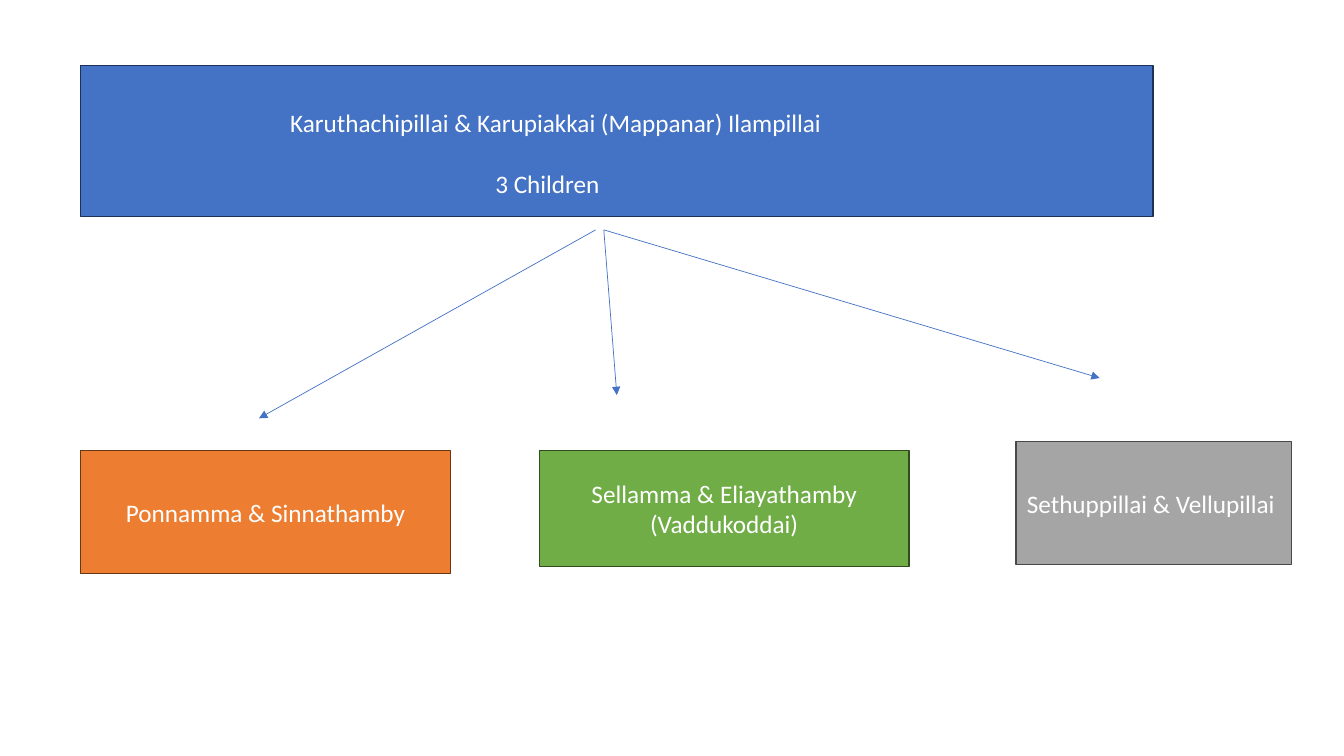
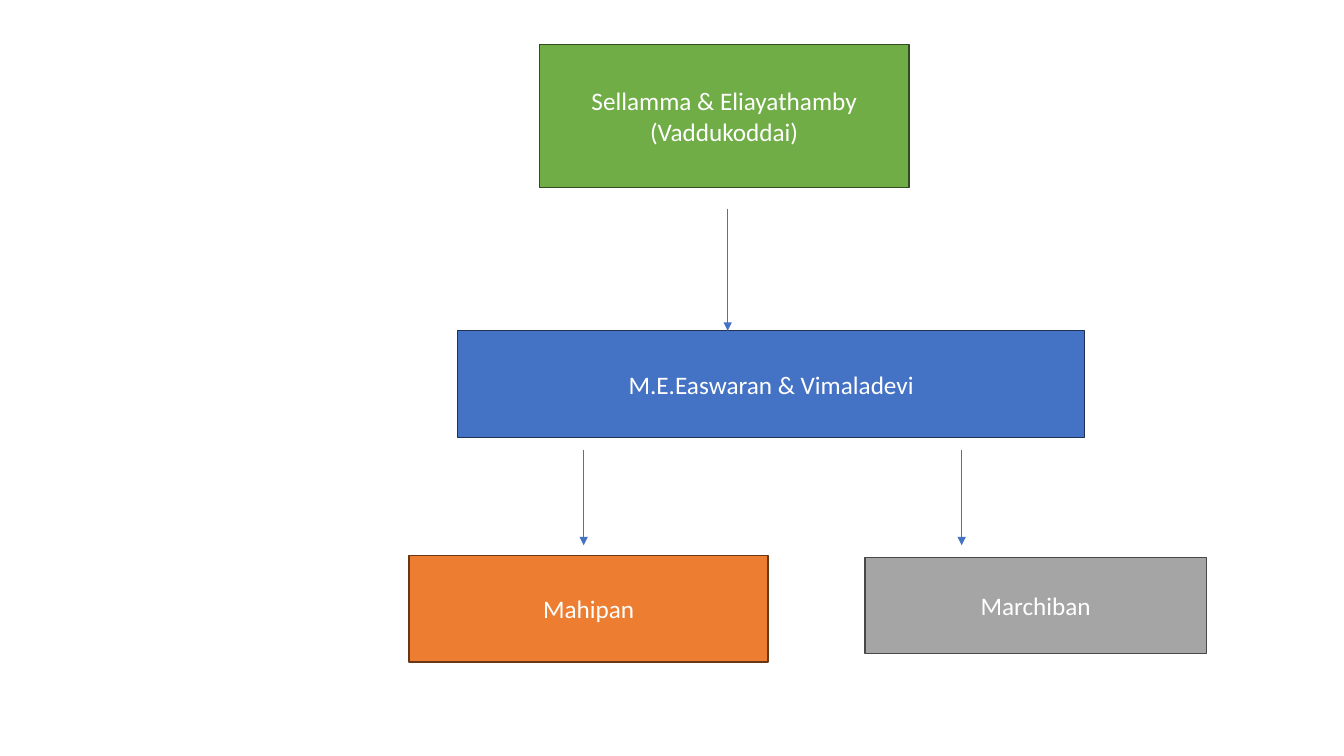
from dataclasses import dataclass

from lxml.etree import SubElement
from pptx import Presentation
from pptx.dml.color import RGBColor
from pptx.enum.shapes import MSO_CONNECTOR, MSO_SHAPE
from pptx.enum.text import MSO_ANCHOR, PP_ALIGN
from pptx.oxml.ns import qn
from pptx.util import Pt


@dataclass(frozen=True)
class Theme:
    font: str = "Calibri"
    text_size: float = 18
    text_color: str = "FFFFFF"
    border_width: float = 1
    arrow_width: float = 0.5
    arrow_color: str = "4472C4"
    blue: tuple = ("4472C4", "1E3256")
    orange: tuple = ("ED7D31", "683715")
    green: tuple = ("70AD47", "314C1F")
    gray: tuple = ("A5A5A5", "484848")


def write(para, text, *, theme, align=PP_ALIGN.CENTER, indent=0, before=0):
    para.alignment = align
    para.space_before = Pt(before)
    if indent:
        para._p.get_or_add_pPr().set("marL", str(Pt(indent)))
    span = para.add_run()
    span.text = text
    span.font.name = theme.font
    span.font.size = Pt(theme.text_size)
    span.font.color.rgb = RGBColor.from_string(theme.text_color)


class FamilyTree:
    def __init__(self, theme):
        self.theme = theme
        self.deck = Presentation()
        self.deck.slide_width = Pt(960)
        self.deck.slide_height = Pt(540)
        self.page = None

    def new_page(self):
        self.page = self.deck.slides.add_slide(self.deck.slide_layouts[6])

    def box(self, left, top, width, height, colors, text=None):
        fill, border = colors
        box = self.page.shapes.add_shape(
            MSO_SHAPE.RECTANGLE, Pt(left), Pt(top), Pt(width), Pt(height))
        box.shadow.inherit = False
        box.fill.solid()
        box.fill.fore_color.rgb = RGBColor.from_string(fill)
        box.line.color.rgb = RGBColor.from_string(border)
        box.line.width = Pt(self.theme.border_width)
        if text:
            box.text_frame.word_wrap = True
            box.text_frame.vertical_anchor = MSO_ANCHOR.MIDDLE
            write(box.text_frame.paragraphs[0], text, theme=self.theme)

    def heading(self, left, top, width, height, lines):
        box = self.page.shapes.add_textbox(Pt(left), Pt(top), Pt(width), Pt(height))
        frame = box.text_frame
        frame.word_wrap = True
        for number, (text, indent, before) in enumerate(lines):
            para = frame.add_paragraph() if number else frame.paragraphs[0]
            write(para, text, theme=self.theme, align=PP_ALIGN.LEFT,
                  indent=indent, before=before)

    def arrow(self, start, end):
        arrow = self.page.shapes.add_connector(
            MSO_CONNECTOR.STRAIGHT, *map(Pt, start + end))
        arrow.line.color.rgb = RGBColor.from_string(self.theme.arrow_color)
        arrow.line.width = Pt(self.theme.arrow_width)
        SubElement(arrow.line._get_or_add_ln(), qn("a:tailEnd"), type="triangle")
        SubElement(arrow._element.spPr, qn("a:effectLst"))


def build_grandparents(tree, couple):
    theme = tree.theme
    tree.new_page()
    tree.box(57.6, 46.8, 766, 108, theme.blue)
    tree.heading(155.5, 73.4, 630, 72.7, [
        ("Karuthachipillai & Karupiakkai (Mappanar) Ilampillai", 44.7, 0),
        ("3 Children", 191.2, 22),
    ])
    arrow_top = 164.2
    for start, end in [(425.5, (185, 298.8)),
                       (431.3, (440.6, 282.2)),
                       (431.3, (785.5, 270))]:
        tree.arrow((start, arrow_top), end)
    tree.box(57.6, 321.8, 264.2, 87.8, theme.orange, "Ponnamma & Sinnathamby")
    tree.box(385.2, 321.8, 264.2, 82.8, theme.green, couple)
    tree.box(725.8, 315.4, 196.6, 87.8, theme.gray, "Sethuppillai & Vellupillai ")


def build_parents(tree, couple):
    theme = tree.theme
    tree.new_page()
    tree.box(385.2, 31.7, 264.2, 102.2, theme.green, couple)
    tree.box(326.9, 236.2, 447.8, 76.3, theme.blue, "M.E.Easwaran & Vimaladevi")
    tree.box(292.3, 396.7, 256.3, 76.3, theme.orange, "Mahipan")
    tree.box(617.8, 398.2, 244, 68.4, theme.gray, "Marchiban")
    for center, top, bottom in [(519.8, 149, 236.2),
                                (416.9, 321.1, 389.5),
                                (686.9, 321.1, 389.5)]:
        tree.arrow((center, top), (center, bottom))


def main():
    tree = FamilyTree(Theme())
    couple = "Sellamma & Eliayathamby (Vaddukoddai)"
    build_grandparents(tree, couple)
    build_parents(tree, couple)
    tree.deck.save("out.pptx")


if __name__ == "__main__":
    main()
